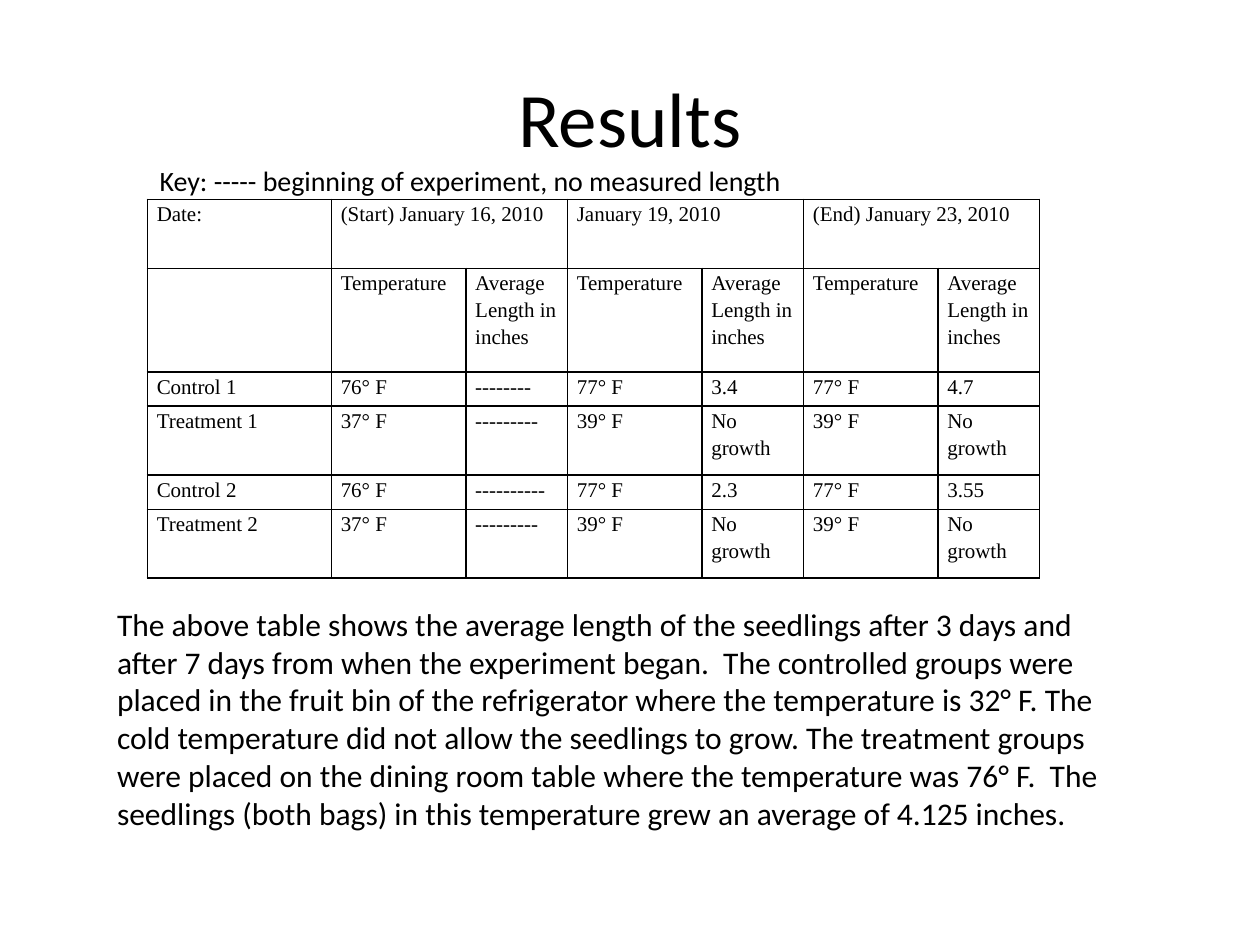
from lxml import etree
from pptx import Presentation
from pptx.dml import color
from pptx.enum import text
from pptx.oxml import ns
from pptx.util import Cm, Pt

COLOURS = {"ink": "000000", "paper": "FFFFFF"}
INK = color.RGBColor.from_string(COLOURS["ink"])

DATES = ["(Start) January 16, 2010", "January 19, 2010", "(End) January 23, 2010"]
MEASURES = ["Temperature", "Average Length in inches"]
READINGS = [
    ["Control 1", "76° F", "--------", "77° F", "3.4", "77° F", "4.7"],
    ["Treatment 1", "37° F", "---------", "39° F", "No growth", "39° F", "No growth"],
    ["Control 2", "76° F", "----------", "77° F", "2.3", "77° F", "3.55"],
    ["Treatment 2", "37° F", "---------", "39° F", "No growth", "39° F", "No growth"],
]
LABEL_WIDTH, MEASURE_WIDTHS = 3.71, [2.71, 2.05]
ROW_HEIGHTS = [1.39, 2.09, 0.69, 1.39, 0.69, 1.39]

KEY = "Key: ----- beginning of experiment, no measured length"
SUMMARY = (
    "The above table shows the average length of the seedlings after 3 days and "
    "after 7 days from when the experiment began.  The controlled groups were "
    "placed in the fruit bin of the refrigerator where the temperature is 32° F. "
    "The cold temperature did not allow the seedlings to grow. The treatment "
    "groups were placed on the dining room table where the temperature was 76° F.  "
    "The seedlings (both bags) in this temperature grew an average of 4.125 inches."
)


def style(paragraph, size, face):
    paragraph.font.size = Pt(size)
    paragraph.font.name = face
    paragraph.font.color.rgb = INK


def add_caption(slide, box, wording, size, align=text.PP_ALIGN.LEFT,
                anchor=text.MSO_ANCHOR.TOP):
    frame = slide.shapes.add_textbox(*map(Cm, box)).text_frame
    frame.word_wrap = True
    frame.vertical_anchor = anchor
    paragraph = frame.paragraphs[0]
    paragraph.text = wording
    paragraph.alignment = align
    style(paragraph, size, "Calibri")


def add_borders(cell):
    properties = cell._tc.get_or_add_tcPr()
    for side in ("a:lnL", "a:lnR", "a:lnT", "a:lnB"):
        line = etree.SubElement(properties, ns.qn(side), w=str(Pt(1)))
        fill = etree.SubElement(line, ns.qn("a:solidFill"))
        etree.SubElement(fill, ns.qn("a:srgbClr"), val=COLOURS["ink"])


def fill_cell(cell, wording):
    add_borders(cell)
    cell.fill.background()
    cell.margin_left = cell.margin_right = Cm(0.19)
    cell.margin_top = cell.margin_bottom = 0
    paragraph = cell.text_frame.paragraphs[0]
    paragraph.text = wording
    paragraph.line_spacing = 1.15
    style(paragraph, 12, "Times New Roman")


def add_results(slide, left, top):
    date_row = ["Date:"] + [part for date in DATES for part in (date, "")]
    rows = [date_row, [""] + MEASURES * len(DATES)] + READINGS
    widths = [LABEL_WIDTH] + MEASURE_WIDTHS * len(DATES)
    results = slide.shapes.add_table(
        len(rows), len(widths), Cm(left), Cm(top),
        Cm(sum(widths)), Cm(sum(ROW_HEIGHTS))).table
    results.first_row = results.horz_banding = False
    for column, width in zip(results.columns, widths):
        column.width = Cm(width)
    for row, height, wordings in zip(results.rows, ROW_HEIGHTS, rows):
        row.height = Cm(height)
        for cell, wording in zip(row.cells, wordings):
            fill_cell(cell, wording)
    for first in range(1, len(widths), len(MEASURES)):
        results.cell(0, first).merge(results.cell(0, first + 1))


def build_results_slide(deck):
    slide = deck.slides.add_slide(deck.slide_layouts[6])
    slide.background.fill.solid()
    slide.background.fill.fore_color.rgb = color.RGBColor.from_string(COLOURS["paper"])
    add_caption(slide, (1.27, 0.76, 22.86, 3.18), "Results", 44,
                text.PP_ALIGN.CENTER, text.MSO_ANCHOR.MIDDLE)
    add_results(slide, 2.97, 4.02)
    add_caption(slide, (2.11, 12.07, 20.75, 5.64), SUMMARY, 18)
    add_caption(slide, (2.97, 3.18, 16.71, 0.94), KEY, 16)


def main():
    deck = Presentation()
    deck.slide_width, deck.slide_height = Cm(25.4), Cm(19.05)
    build_results_slide(deck)
    deck.save("out.pptx")


if __name__ == "__main__":
    main()
